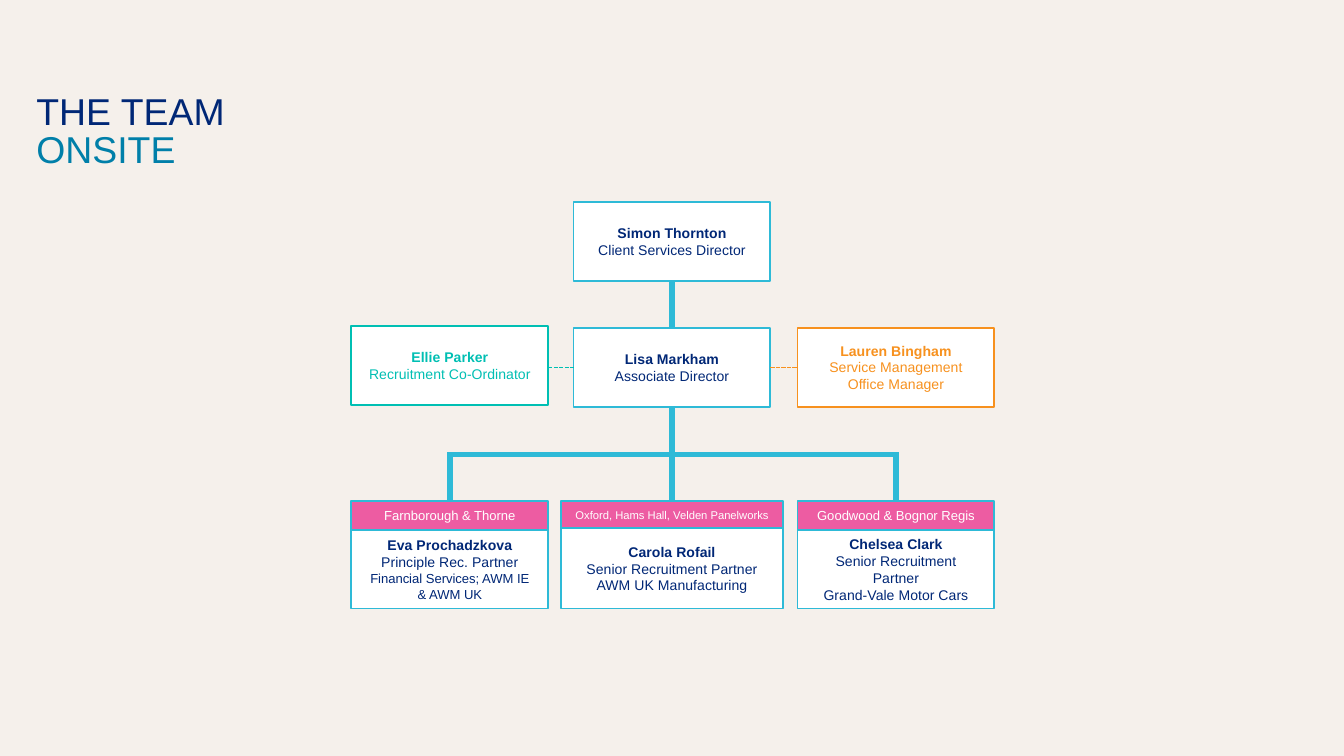
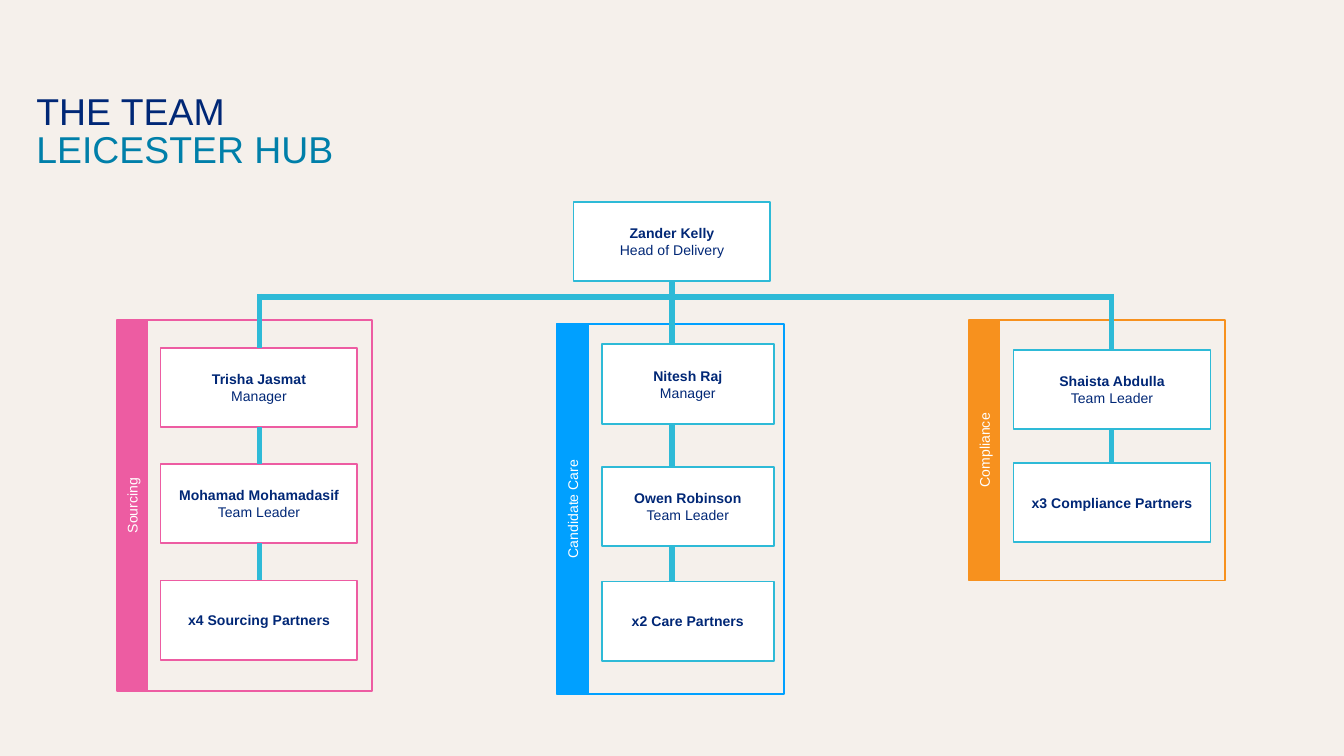
"""Build the two team organisation charts: onsite and Leicester hub."""
from dataclasses import dataclass

from lxml.etree import SubElement
from pptx import Presentation
from pptx.dml.color import RGBColor
from pptx.enum.dml import MSO_LINE
from pptx.enum.shapes import MSO_CONNECTOR, MSO_SHAPE
from pptx.enum.text import MSO_ANCHOR, PP_ALIGN
from pptx.oxml.ns import qn
from pptx.util import Pt


@dataclass(frozen=True)
class Theme:
    font: str = "Arial"
    paper: str = "F5F0EB"
    white: str = "FFFFFF"
    navy: str = "002776"
    teal: str = "007FA9"
    cyan: str = "2EBAD7"
    pink: str = "ED5CA2"
    orange: str = "F7911E"
    green: str = "00BFB3"
    blue: str = "00A0FF"
    title: float = 20
    body: float = 7.5
    small: float = 7
    tiny: float = 6


T = Theme()


def add_box(s, x, y, w, h, line, fill=None, lines=(), color=T.navy):
    sp = s.shapes.add_shape(MSO_SHAPE.RECTANGLE, Pt(x), Pt(y), Pt(w), Pt(h))
    sp.shadow.inherit = False
    if fill:
        sp.fill.solid()
        sp.fill.fore_color.rgb = RGBColor.from_string(fill)
    else:
        sp.fill.background()
    sp.line.color.rgb = RGBColor.from_string(line)
    sp.line.width = Pt(1)
    tf = sp.text_frame
    tf.word_wrap = True
    tf.vertical_anchor = MSO_ANCHOR.MIDDLE
    for i, (text, size, bold) in enumerate(lines):
        p = tf.add_paragraph() if i else tf.paragraphs[0]
        p.alignment = PP_ALIGN.CENTER
        r = p.add_run()
        r.text = text
        r.font.name, r.font.size, r.font.bold = T.font, Pt(size), bold
        r.font.color.rgb = RGBColor.from_string(color)
    return sp


def add_line(s, x1, y1, x2, y2, color=T.cyan, width=3, dash=None):
    c = s.shapes.add_connector(MSO_CONNECTOR.STRAIGHT, Pt(x1), Pt(y1), Pt(x2), Pt(y2))
    c.line.color.rgb = RGBColor.from_string(color)
    c.line.width = Pt(width)
    if dash:
        c.line.dash_style = dash
    SubElement(c._element.spPr, qn("a:effectLst"))


prs = Presentation()
prs.slide_width, prs.slide_height = Pt(720), Pt(405)
bg = prs.slide_master.background.fill
bg.solid()
bg.fore_color.rgb = RGBColor.from_string(T.paper)

slides = []
for subtitle in ("ONSITE", "LEICESTER HUB"):
    s = prs.slides.add_slide(prs.slide_layouts[6])
    tf = s.shapes.add_textbox(Pt(19.5), Pt(51), Pt(680), Pt(37.5)).text_frame
    tf.word_wrap = True
    tf.margin_left = tf.margin_top = tf.margin_right = tf.margin_bottom = 0
    p = tf.paragraphs[0]
    p.line_spacing = 0.85
    for i, (text, color) in enumerate((("THE TEAM", T.navy), (subtitle, T.teal))):
        if i:
            p.add_line_break()
        r = p.add_run()
        r.text = text
        r.font.name, r.font.size = T.font, Pt(T.title)
        r.font.color.rgb = RGBColor.from_string(color)
    slides.append(s)
onsite, hub = slides

BOX_W, BOX_H = 105.5, 42.5
LEFT, MID, RIGHT = 241, 360, 480
TOP_Y, LEAD_Y, SITE_Y, BAR_Y = 108, 175.5, 268.5, 243.5

leads = [
    (MID, TOP_Y, T.cyan, T.navy, "Simon Thornton", "Client Services Director"),
    (MID, LEAD_Y, T.cyan, T.navy, "Lisa Markham", "Associate Director"),
    (LEFT, LEAD_Y - 1, T.green, T.green, "Ellie Parker", "Recruitment Co-Ordinator"),
    (RIGHT, LEAD_Y, T.orange, T.orange, "Lauren Bingham", "Service Management Office Manager"),
]
for x, y, line, color, name, role in leads:
    add_box(onsite, x - BOX_W / 2, y, BOX_W, BOX_H, line, T.white,
            [(name, T.body, True), (role, T.body, False)], color)

sites = [
    (LEFT, BOX_W, 15.5, "Farnborough & Thorne", T.small, "Eva Prochadzkova",
     [("Principle Rec. Partner", T.body), ("Financial Services; AWM IE & AWM UK", T.small)]),
    (MID, 119, 14.5, "Oxford, Hams Hall, Velden Panelworks", T.tiny, "Carola Rofail",
     [("Senior Recruitment Partner", T.body), ("AWM UK Manufacturing", T.body)]),
    (RIGHT, BOX_W, 15.5, "Goodwood & Bognor Regis", T.small, "Chelsea Clark",
     [("Senior Recruitment Partner", T.body), ("Grand-Vale Motor Cars", T.body)]),
]
add_line(onsite, MID, TOP_Y + BOX_H, MID, LEAD_Y)
add_line(onsite, MID, LEAD_Y + BOX_H, MID, SITE_Y)
add_line(onsite, LEFT - 1.5, BAR_Y, RIGHT + 1.5, BAR_Y)
for x in (LEFT, RIGHT):
    add_line(onsite, x, BAR_Y, x, SITE_Y)
for x, color in ((LEFT, T.green), (MID, T.orange)):
    add_line(onsite, x + BOX_W / 2, 197, x + 119.5 - BOX_W / 2, 197, color, 0.75, MSO_LINE.SQUARE_DOT)
for x, w, label_h, label, size, name, roles in sites:
    staff = [(name, T.body, True)] + [(role, pt, False) for role, pt in roles]
    add_box(onsite, x - w / 2, SITE_Y + label_h, w, 326 - SITE_Y - label_h, T.cyan, T.white, staff)
    add_box(onsite, x - w / 2, SITE_Y, w, label_h, T.cyan, T.pink, [(label, size, False)], T.white)

HUB_Y, TAB_W, FRAME_W = 159, 16.5, 121.5
add_box(hub, MID - BOX_W / 2, TOP_Y, BOX_W, BOX_H, T.cyan, T.white,
        [("Zander Kelly", T.body, True), ("Head of Delivery", T.body, False)])
add_line(hub, MID, TOP_Y + BOX_H, MID, HUB_Y)

teams = [
    ("Sourcing", T.pink, T.pink, 62.5, 78, 171.5, 198.5, 86, BOX_W, 139,
     [(186.5, "Trisha Jasmat", "Manager"), (248.5, "Mohamad Mohamadasif", "Team Leader"),
      (311, "x4 Sourcing Partners", None)]),
    ("Candidate Care", T.blue, T.cyan, 298.5, 298.5, 173.5, 198.5, 322.5, 92, MID,
     [(184.5, "Nitesh Raj", "Manager"), (250, "Owen Robinson", "Team Leader"),
      (311.5, "x2 Care Partners", None)]),
    ("Compliance", T.orange, T.cyan, 519, 535, 171.5, 139.5, 543, BOX_W, 595.5,
     [(187.5, "Shaista Abdulla", "Team Leader"), (248, "x3 Compliance Partners", None)]),
]
add_line(hub, teams[0][9], HUB_Y, teams[-1][9], HUB_Y)
for label, color, line, tab_x, frame_x, y, h, x, w, link_x, staff in teams:
    add_box(hub, frame_x, y, FRAME_W, h, color)
    tab = add_box(hub, tab_x + (TAB_W - h) / 2, y + (h - TAB_W) / 2, h, TAB_W,
                  color, color, [(label, T.body, False)], T.white)
    tab.rotation = 270
    link_y = HUB_Y - 1.5
    for box_y, name, role in staff:
        lines = [(name, T.body, True)] + ([(role, T.body, False)] if role else [])
        add_box(hub, x, box_y, w, BOX_H, line, T.white, lines)
        add_line(hub, link_x, link_y, link_x, box_y)
        link_y = box_y + BOX_H

prs.save("out.pptx")
